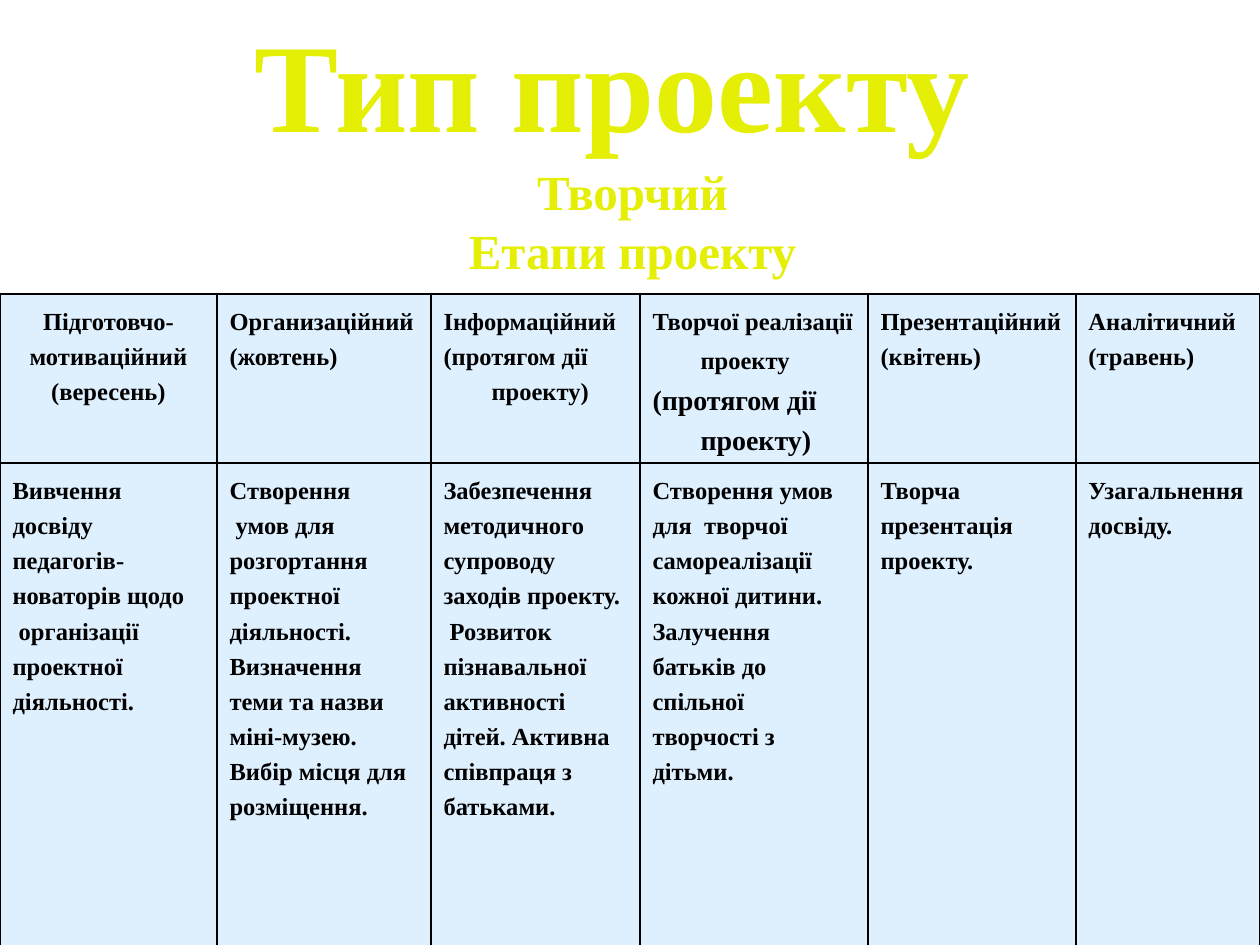
from lxml.etree import SubElement
from pptx import Presentation
from pptx.dml.color import RGBColor
from pptx.enum.text import MSO_ANCHOR, MSO_AUTO_SIZE, PP_ALIGN
from pptx.oxml.ns import qn
from pptx.util import Emu, Pt

PX = 914400 // 126
FONT = "Times New Roman"
YELLOW, BLACK, BLUE = "E4EF05", "000000", "2294FC"
HANGING = 48 * PX


def add_span(para, text, size, color):
    span = para.add_run()
    span.text = text
    span.font.name = FONT
    span.font.size = Pt(size)
    span.font.bold = True
    span.font.color.rgb = RGBColor.from_string(color)


def style_cell(cell):
    """Black border on every side and a pale, mostly transparent blue fill."""
    properties = cell._tc.get_or_add_tcPr()
    for side in ("lnL", "lnR", "lnT", "lnB"):
        line = SubElement(properties, qn(f"a:{side}"), w=str(Pt(1)))
        fill = SubElement(line, qn("a:solidFill"))
        SubElement(fill, qn("a:srgbClr"), val=BLACK)
    fill = SubElement(properties, qn("a:solidFill"))
    color = SubElement(fill, qn("a:srgbClr"), val=BLUE)
    SubElement(color, qn("a:alpha"), val="15000")


deck = Presentation()
deck.slide_width, deck.slide_height = Emu(1260 * PX), Emu(945 * PX)
page = deck.slides.add_slide(deck.slide_layouts[0])

# Heading and subheading
headings = [
    (page.shapes.title, (249, 0, 726, 193), 72, ["Тип проекту"]),
    (page.placeholders[1], (5, 155, 1255, 130), 28, ["Творчий", "Етапи проекту"]),
]
for box, place, size, lines in headings:
    box.left, box.top, box.width, box.height = [Emu(n * PX) for n in place]
    frame = box.text_frame
    frame.auto_size = MSO_AUTO_SIZE.NONE
    frame.word_wrap = True
    frame.margin_left = frame.margin_right = 0
    frame.vertical_anchor = MSO_ANCHOR.TOP
    for index, text in enumerate(lines):
        para = frame.paragraphs[0] if index == 0 else frame.add_paragraph()
        para.alignment = PP_ALIGN.CENTER
        para.space_before = Pt(0)
        add_span(para, text, size, YELLOW)

# Project stages: each column has a heading cell and a content cell
stages = [
    (217, ["Підготовчо-", "мотиваційний", "(вересень)"],
     ["Вивчення", "досвіду", "педагогів-", "новаторів щодо", " організації",
      "проектної", "діяльності."]),
    (214, ["Организаційний", "(жовтень)"],
     ["Створення", " умов для", "розгортання", "проектної", "діяльності.",
      "Визначення", "теми та назви", "міні-музею.", "Вибір місця для",
      "розміщення."]),
    (209, ["Інформаційний", "(протягом дії проекту)"],
     ["Забезпечення", "методичного", "супроводу", "заходів проекту.",
      " Розвиток", "пізнавальної", "активності", "дітей. Активна",
      "співпраця з", "батьками."]),
    (228, ["Творчої реалізації проекту", "(протягом дії проекту)"],
     ["Створення умов", "для  творчої", "самореалізації", "кожної дитини.",
      "Залучення", "батьків до", "спільної", "творчості з", "дітьми."]),
    (208, ["Презентаційний", "(квітень)"],
     ["Творча", "презентація", "проекту."]),
    (184, ["Аналітичний", "(травень)"],
     ["Узагальнення", "досвіду."]),
]
row_heights = [169, 484]
table = page.shapes.add_table(
    len(row_heights), len(stages), 0, Emu(294 * PX),
    Emu(1260 * PX), Emu(sum(row_heights) * PX)).table
table.first_row = table.horz_banding = False
for row, height in zip(table.rows, row_heights):
    row.height = Emu(height * PX)

for column, (width, *contents) in enumerate(stages):
    table.columns[column].width = Emu(width * PX)
    for row, lines in enumerate(contents):
        cell = table.cell(row, column)
        style_cell(cell)
        frame = cell.text_frame
        for index, text in enumerate(lines):
            para = frame.paragraphs[0] if index == 0 else frame.add_paragraph()
            properties = para._p.get_or_add_pPr()
            properties.set("marL", str(HANGING))
            properties.set("indent", str(-HANGING))
            para.line_spacing = 1.3
            if (row, column) == (0, 0):
                para.alignment = PP_ALIGN.CENTER
            creative_heading = (row, column) == (0, 3)
            add_span(para, text, 16 if creative_heading and index else 14, BLACK)
            if creative_heading and index == 0:
                add_span(para, " ", 16, BLACK)

deck.save("out.pptx")
